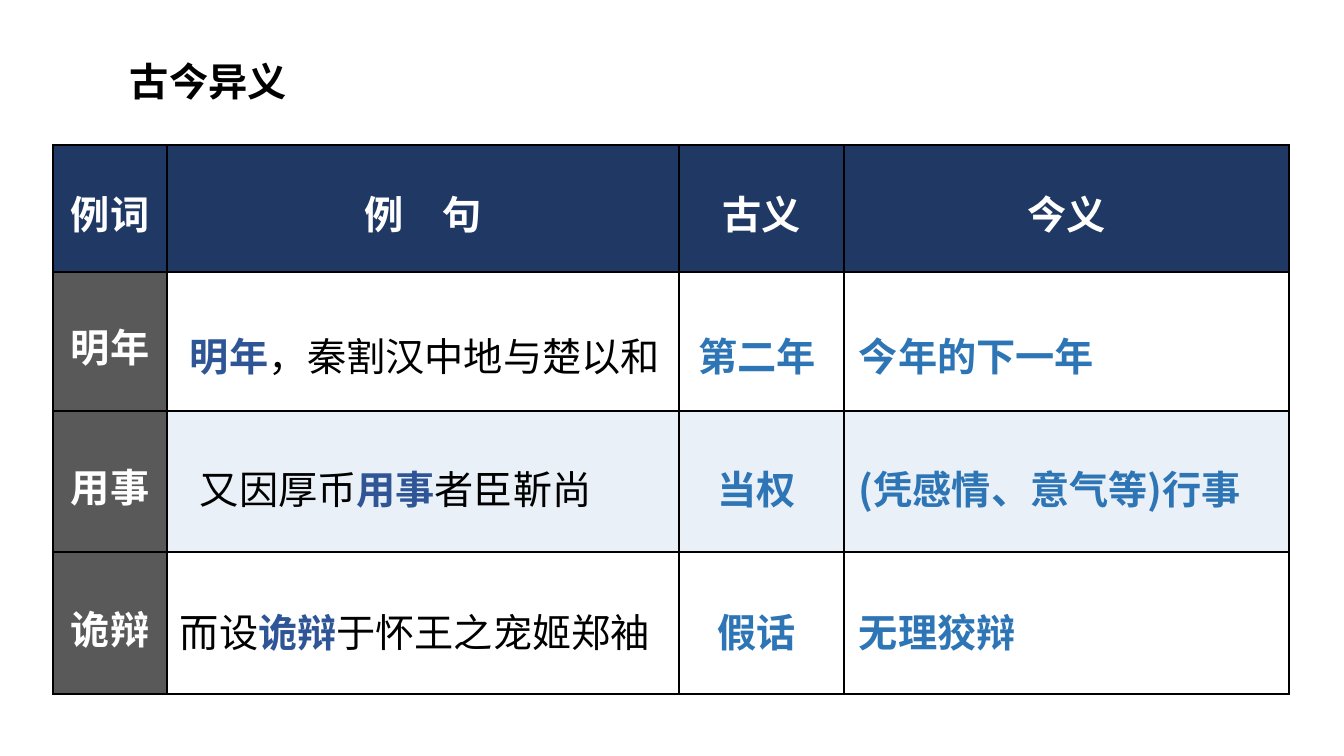
from lxml.etree import SubElement
from pptx import Presentation
from pptx.dml.color import RGBColor
from pptx.enum.lang import MSO_LANGUAGE_ID as LANG
from pptx.enum.text import MSO_ANCHOR as ANCHOR, MSO_AUTO_SIZE as FIT, PP_ALIGN as ALIGN
from pptx.oxml.ns import qn
from pptx.util import Pt

TITLE = "古今异义"
HEADERS = ["例词", "例　句", "古义", "今义"]
WORDS = ["明年", "用事", "诡辩"]
SENTENCES = [
    ("", "明年", "，秦割汉中地与楚以和"),
    ("又因厚币", "用事", "者臣靳尚"),
    ("而设", "诡辩", "于怀王之宠姬郑袖"),
]
OLD_MEANINGS = ["第二年", "当权", "假话"]
NEW_MEANINGS = ["今年的下一年", "(凭感情、意气等)行事", "无理狡辩"]

THEME = {
    "font": "Noto Sans CJK SC", "size": 28, "border": 1, "tint": 10,
    "black": "000000", "white": "FFFFFF", "header": "203864",
    "word": "595959", "keyword": "2F5597", "meaning": "2E75B6",
}

TABLE_LEFT, TABLE_TOP = 53, 145
COL_WIDTHS = [114, 512, 165, 445]
ROW_HEIGHTS = [127, 139, 141, 142]
TITLE_BOX = (120, 43, 594, 57)
LINE_TOPS = [320, 453, 596]
SENTENCE_SPANS = [(180, 497), (190, 480), (170, 492)]
OLD_SPAN = (687, 140)
NEW_SPAN = (849, 438)
BOX_HEIGHT = 57


def px(n):
    return round(n * 914400 / 100.8)


def write(tf, runs, align=ALIGN.LEFT, spacing=1.15):
    p = tf.paragraphs[0]
    p.alignment = align
    p.line_spacing = spacing
    for text, color, bold in runs:
        r = p.add_run()
        r.text = text
        f = r.font
        f.size = Pt(THEME["size"])
        f.bold = bold
        f.color.rgb = RGBColor.from_string(THEME[color])
        f.name = THEME["font"]
        f.language_id = LANG.SIMPLIFIED_CHINESE
        SubElement(r._r.get_or_add_rPr(), qn("a:ea"), typeface=THEME["font"])


def add_text(s, box, runs, **layout):
    tf = s.shapes.add_textbox(*map(px, box)).text_frame
    tf.word_wrap = True
    tf.auto_size = FIT.NONE
    write(tf, runs, **layout)


def style_cell(cell, color, alpha=None):
    tc_pr = cell._tc.get_or_add_tcPr()
    for side in ("lnL", "lnR", "lnT", "lnB"):
        ln = SubElement(tc_pr, qn(f"a:{side}"), w=str(Pt(THEME["border"])))
        SubElement(SubElement(ln, qn("a:solidFill")), qn("a:srgbClr"), val=THEME["black"])
    fill = SubElement(tc_pr, qn("a:solidFill"))
    clr = SubElement(fill, qn("a:srgbClr"), val=THEME[color])
    if alpha:
        SubElement(clr, qn("a:alpha"), val=str(alpha * 1000))


def label_cell(cell, text):
    cell.margin_left = cell.margin_right = cell.margin_top = cell.margin_bottom = 0
    cell.vertical_anchor = ANCHOR.MIDDLE
    write(cell.text_frame, [(text, "white", True)], ALIGN.CENTER)


def add_grid(s):
    frame = s.shapes.add_table(
        len(ROW_HEIGHTS), len(COL_WIDTHS), px(TABLE_LEFT), px(TABLE_TOP),
        px(sum(COL_WIDTHS)), px(sum(ROW_HEIGHTS)))
    table = frame.table
    table.first_row = table.horz_banding = False
    for col, width in zip(table.columns, COL_WIDTHS):
        col.width = px(width)
    for row, height in zip(table.rows, ROW_HEIGHTS):
        row.height = px(height)
    for c, header in enumerate(HEADERS):
        label_cell(table.cell(0, c), header)
        style_cell(table.cell(0, c), "header")
    for i, word in enumerate(WORDS, 1):
        label_cell(table.cell(i, 0), word)
        style_cell(table.cell(i, 0), "word")
        for c in range(1, len(HEADERS)):
            style_cell(table.cell(i, c), "white" if i % 2 else "meaning", THEME["tint"])


def add_entries(s):
    entries = zip(LINE_TOPS, SENTENCE_SPANS, SENTENCES, OLD_MEANINGS, NEW_MEANINGS)
    for top, (left, width), (before, keyword, after), old, new in entries:
        sentence = [(before, "black", False), (keyword, "keyword", True), (after, "black", False)]
        add_text(s, (left, top, width, BOX_HEIGHT), [run for run in sentence if run[0]])
        for (x, w), meaning, align in ((OLD_SPAN, old, ALIGN.CENTER), (NEW_SPAN, new, ALIGN.LEFT)):
            add_text(s, (x, top, w, BOX_HEIGHT), [(meaning, "meaning", True)], align=align)


def main():
    prs = Presentation()
    prs.slide_width, prs.slide_height = px(1344), px(756)
    s = prs.slides.add_slide(prs.slide_layouts[6])
    add_text(s, TITLE_BOX, [(TITLE, "black", True)], spacing=1.2)
    add_grid(s)
    add_entries(s)
    prs.save("out.pptx")


if __name__ == "__main__":
    main()
